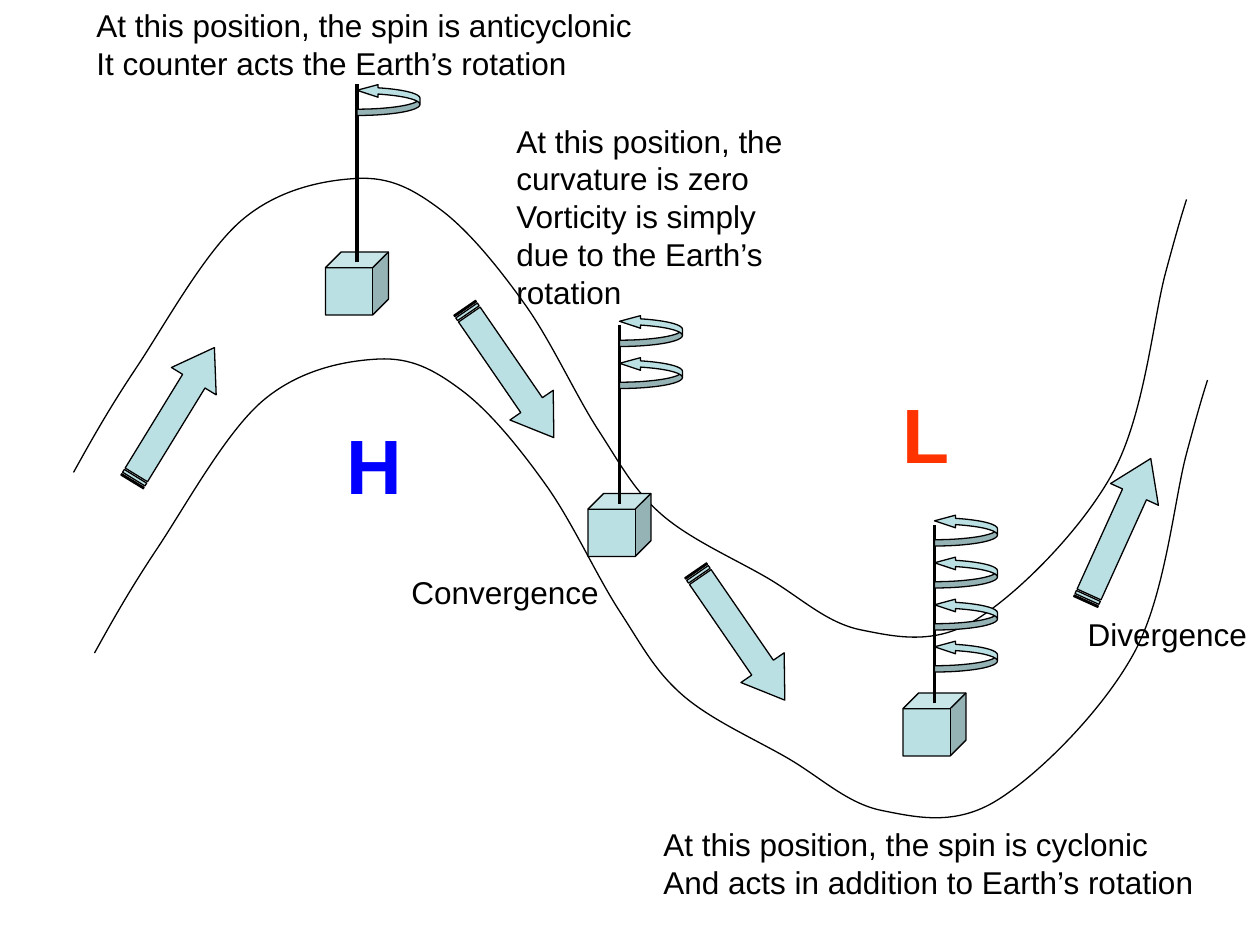
from lxml import etree
from pptx import Presentation
from pptx.dml.color import RGBColor
from pptx.enum.shapes import MSO_CONNECTOR, MSO_SHAPE
from pptx.enum.text import MSO_AUTO_SIZE
from pptx.oxml.ns import qn
from pptx.util import Inches, Pt

CUBE = MSO_SHAPE.CUBE
SPIN_ARROW = MSO_SHAPE.CURVED_RIGHT_ARROW
FLOW_ARROW = MSO_SHAPE.STRIPED_RIGHT_ARROW
STRAIGHT = MSO_CONNECTOR.STRAIGHT
FIT_SHAPE = MSO_AUTO_SIZE.SHAPE_TO_FIT_TEXT

COLORS = {"ice": "BBE0E3", "black": "000000", "high": "0000FF", "low": "FF3300"}
CELLS_PER_INCH = 12

STREAM_ANCHORS = [
    (7, 45), (13, 35), (23, 21), (34, 17), (42, 20), (50, 29), (57, 41),
    (63, 49), (73, 55), (82, 60), (93, 59), (106, 45), (111, 26), (113, 19),
]
STREAM_OFFSETS = [(0, 0), (2, 17.2)]
STATIONS = [((31, 24), [8]), ((56, 47), [30, 34]), ((86, 66), [49, 53, 57, 61])]
FLOWS = [((9, 37), 301.5), ((41, 33), 55.5), ((63, 58), 55.5), ((99, 48), 294.4)]


def grid(cells):
    return Inches(cells / CELLS_PER_INCH)


def color(name):
    return RGBColor.from_string(COLORS[name])


def outline(shape, width=0.75):
    shape.line.color.rgb = color("black")
    shape.line.width = Pt(width)


def midpoint(first, second):
    return tuple((a + b) / 2 for a, b in zip(first, second))


def spline(anchors):
    tangents = [
        ((after[0] - before[0]) / 6, (after[1] - before[1]) / 6)
        for before, after in zip(anchors, anchors[2:])
    ]
    leaving = [(x + u, y + v) for (x, y), (u, v) in zip(anchors[1:], tangents)]
    arriving = [(x - u, y - v) for (x, y), (u, v) in zip(anchors[1:], tangents)]
    leaving.insert(0, midpoint(anchors[0], arriving[0]))
    arriving.append(midpoint(leaving[-1], anchors[-1]))
    return [point for segment in zip(leaving, arriving, anchors[1:]) for point in segment]


def add_streamline(slide, offset):
    anchors = [(x + offset[0], y + offset[1]) for x, y in STREAM_ANCHORS]
    start, *points = [(grid(x), grid(y)) for x, y in [anchors[0], *spline(anchors)]]
    builder = slide.shapes.build_freeform(*start)
    builder.add_line_segments(points, close=False)
    shape = builder.convert_to_shape()
    shape.shadow.inherit = False
    shape.fill.background()
    outline(shape)
    steps = list(shape._element.iter(qn("a:lnTo")))
    for index in range(0, len(steps), 3):
        curve = etree.Element(qn("a:cubicBezTo"))
        steps[index].addprevious(curve)
        for step in steps[index:index + 3]:
            curve.append(step[0])
            step.getparent().remove(step)


def add_solid(slide, kind, corner, size, adjustments, rotation=0):
    shape = slide.shapes.add_shape(kind, *map(grid, (*corner, *size)))
    shape.shadow.inherit = False
    shape.fill.solid()
    shape.fill.fore_color.rgb = color("ice")
    outline(shape)
    shape.rotation = rotation
    for index, value in enumerate(adjustments):
        shape.adjustments[index] = value


def add_pole(slide, x, bottom, height):
    pole = slide.shapes.add_connector(
        STRAIGHT, grid(x), grid(bottom), grid(x), grid(bottom - height)
    )
    outline(pole, 1.75)
    etree.SubElement(pole._element.spPr, qn("a:effectLst"))


def add_station(slide, corner, spin_tops):
    left, top = corner
    add_solid(slide, CUBE, corner, (6, 6), [0.25])
    add_pole(slide, left + 3, top + 1, 17)
    for spin_top in spin_tops:
        add_solid(slide, SPIN_ARROW, (left + 3, spin_top), (6, 3), [0.2, 0.4, 0.667], 180)


def add_text(slide, text, box, size=18, ink="black", bold=False, wrap=False):
    frame = slide.shapes.add_textbox(*map(grid, box)).text_frame
    frame.word_wrap = wrap
    frame.auto_size = FIT_SHAPE
    frame.text = text
    for paragraph in frame.paragraphs:
        font = paragraph.font
        font.name = "Arial"
        font.size = Pt(size)
        font.bold = bold
        font.color.rgb = color(ink)


def main():
    presentation = Presentation()
    presentation.slide_width = Inches(10)
    presentation.slide_height = Inches(7.5)
    slide = presentation.slides.add_slide(presentation.slide_layouts[6])

    for offset in STREAM_OFFSETS:
        add_streamline(slide, offset)
    for corner, spin_tops in STATIONS:
        add_station(slide, corner, spin_tops)
    add_text(slide, "H", (31.8, 39.2, 7.7, 10), size=44, ink="high", bold=True)
    add_text(slide, "L", (84.8, 36.2, 6.8, 10), size=44, ink="low", bold=True)
    for corner, rotation in FLOWS:
        add_solid(slide, FLOW_ARROW, corner, (15, 5), [0.5, 0.75], rotation)

    add_text(
        slide,
        "At this position, the spin is anticyclonic\nIt counter acts the Earth’s rotation",
        (8, 0, 53.4, 8.4),
    )
    add_text(
        slide,
        "At this position, the curvature is zero\n"
        "Vorticity is simply due to the Earth’s rotation",
        (48, 11, 29, 19.2),
        wrap=True,
    )
    add_text(
        slide,
        "At this position, the spin is cyclonic\nAnd acts in addition to Earth’s rotation",
        (62, 78, 52.9, 8.4),
    )
    add_text(slide, "Convergence", (38, 54, 20.3, 4.8))
    add_text(slide, "Divergence", (102.4, 58, 17.6, 4.8))

    presentation.save("out.pptx")


if __name__ == "__main__":
    main()
